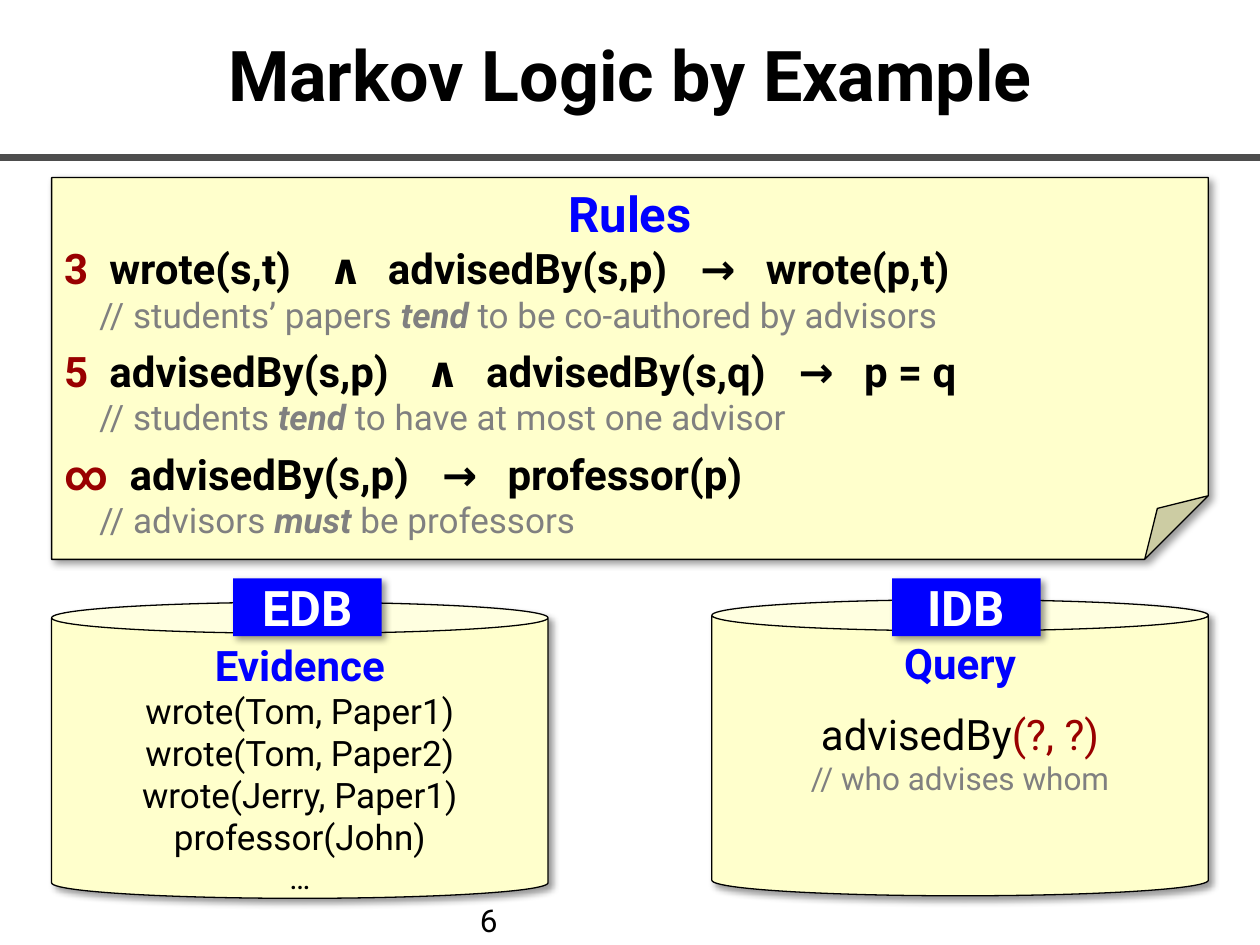
from dataclasses import dataclass

from lxml import etree
from pptx import Presentation
from pptx.dml.color import RGBColor
from pptx.enum.shapes import MSO_CONNECTOR, MSO_SHAPE
from pptx.enum.text import MSO_ANCHOR, PP_ALIGN
from pptx.oxml.ns import qn
from pptx.util import Inches, Pt

CENTER, LEFT = PP_ALIGN.CENTER, PP_ALIGN.LEFT
TOP, MIDDLE = MSO_ANCHOR.TOP, MSO_ANCHOR.MIDDLE
NOTE, CAN, LABEL = MSO_SHAPE.FOLDED_CORNER, MSO_SHAPE.CAN, MSO_SHAPE.RECTANGLE
STRAIGHT = MSO_CONNECTOR.STRAIGHT

FONT = "Roboto"
BLACK, WHITE, BLUE = "000000", "FFFFFF", "0000FF"
RED, GRAY, CREAM, RULE_GRAY = "990000", "808080", "FFFFCC", "4D4D4D"


@dataclass(frozen=True)
class Box:
    left: float
    top: float
    width: float
    height: float

    def lengths(self) -> list:
        return [Inches(v) for v in (self.left, self.top, self.width, self.height)]


@dataclass(frozen=True)
class Run:
    text: str
    size: int
    color: str = BLACK
    bold: bool = False
    italic: bool = False


@dataclass(frozen=True)
class Line:
    runs: tuple
    align: int = CENTER
    before: int = 0
    after: int = 0
    indent: float = 0
    stops: tuple = ()


@dataclass(frozen=True)
class Rule:
    weight: str
    formula: tuple
    stops: tuple
    subject: str
    modal: str
    claim: str

    def lines(self) -> list:
        formula = Run("\t" + "\t".join(self.formula), 24, BLACK, True)
        comment = (
            Run(f"// {self.subject} ", 20, GRAY),
            Run(self.modal, 20, GRAY, True, True),
            Run(f" {self.claim}", 20, GRAY),
        )
        return [
            Line((Run(self.weight, 24, RED, True), formula), LEFT, stops=self.stops),
            Line(comment, LEFT, after=6, indent=0.28),
        ]


@dataclass(frozen=True)
class Database:
    label: str
    label_left: float
    box: Box
    lines: tuple


def rgb(value: str) -> RGBColor:
    return RGBColor.from_string(value)


def write(frame, lines, anchor=TOP, wrap: bool = True) -> None:
    frame.word_wrap = wrap
    frame.vertical_anchor = anchor
    for index, line in enumerate(lines):
        paragraph = frame.add_paragraph() if index else frame.paragraphs[0]
        paragraph.alignment = line.align
        paragraph.space_before = Pt(line.before)
        paragraph.space_after = Pt(line.after)
        properties = paragraph._p.get_or_add_pPr()
        properties.set("marL", str(Inches(line.indent)))
        if line.stops:
            tabs = etree.SubElement(properties, qn("a:tabLst"))
            for stop in line.stops:
                etree.SubElement(tabs, qn("a:tab"), pos=str(Inches(stop)), algn="l")
        for part in line.runs:
            run = paragraph.add_run()
            run.text = part.text
            run.font.name = FONT
            run.font.size = Pt(part.size)
            run.font.bold = part.bold
            run.font.italic = part.italic
            run.font.color.rgb = rgb(part.color)


def add_text(slide, box: Box, line: Line) -> None:
    write(slide.shapes.add_textbox(*box.lengths()).text_frame, [line], MIDDLE)


def add_panel(slide, kind, box: Box, fill: str, outlined: bool = True):
    panel = slide.shapes.add_shape(kind, *box.lengths())
    panel.fill.solid()
    panel.fill.fore_color.rgb = rgb(fill)
    if outlined:
        panel.line.color.rgb = rgb(BLACK)
        panel.line.width = Pt(0.75)
    else:
        panel.line.fill.background()
    panel.shadow.inherit = False
    effects = panel._element.spPr.find(qn("a:effectLst"))
    shadow = etree.SubElement(
        effects, qn("a:outerShdw"), blurRad=str(Pt(4)), dist=str(Pt(3)),
        dir="2700000", algn="tl", rotWithShape="0",
    )
    tint = etree.SubElement(shadow, qn("a:srgbClr"), val=BLACK)
    etree.SubElement(tint, qn("a:alpha"), val="40000")
    return panel


def add_divider(slide, y: float) -> None:
    divider = slide.shapes.add_connector(
        STRAIGHT, Inches(0), Inches(y), Inches(10), Inches(y)
    )
    divider.line.color.rgb = rgb(RULE_GRAY)
    divider.line.width = Pt(4.5)
    etree.SubElement(divider._element.spPr, qn("a:effectLst"))


def add_database(slide, database: Database) -> None:
    can = add_panel(slide, CAN, database.box, CREAM)
    can.adjustments[0] = 0.105
    write(can.text_frame, database.lines)
    label_box = Box(database.label_left, 4.59, 1.18, 0.46)
    label = add_panel(slide, LABEL, label_box, BLUE, outlined=False)
    name = Line((Run(database.label, 28, WHITE, True),))
    write(label.text_frame, [name], MIDDLE, wrap=False)


RULES = (
    Rule("3", ("wrote(s,t)", "∧", "advisedBy(s,p)", "→", "wrote(p,t)"),
         (0.36, 2.1, 2.57, 5.05, 5.57),
         "students’ papers", "tend", "to be co-authored by advisors"),
    Rule("5", ("advisedBy(s,p)", "∧", "advisedBy(s,q)", "→", "p = q"),
         (0.36, 2.87, 3.35, 5.83, 6.35),
         "students", "tend", "to have at most one advisor"),
    Rule("∞", ("advisedBy(s,p)", "→", "professor(p)"),
         (0.52, 3.0, 3.52),
         "advisors", "must", "be professors"),
)
FACTS = (
    "wrote(Tom, Paper1)",
    "wrote(Tom, Paper2)",
    "wrote(Jerry, Paper1) professor(John)",
)
EVIDENCE = (
    Line((Run("Evidence", 24, BLUE, True),)),
    *(Line((Run(fact, 20),)) for fact in FACTS),
    Line((Run("…", 18),)),
)
QUERY = (
    Line((Run("Query", 24, BLUE, True),)),
    Line((Run("advisedBy", 24), Run("(?, ?)", 24, RED)), before=12),
    Line((Run("// who advises whom", 18, GRAY),)),
)
DATABASES = (
    Database("EDB", 1.85, Box(0.41, 4.78, 3.94, 2.35), EVIDENCE),
    Database("IDB", 7.08, Box(5.65, 4.76, 3.94, 2.35), QUERY),
)


def main() -> None:
    deck = Presentation()
    deck.slide_width, deck.slide_height = Inches(10), Inches(7.5)
    slide = deck.slides.add_slide(deck.slide_layouts[6])
    add_divider(slide, 1.25)
    title = Line((Run("Markov Logic by Example", 40, BLACK, True),))
    add_text(slide, Box(0, 0, 10, 1.17), title)
    add_text(slide, Box(3.71, 7.1, 2.33, 0.4), Line((Run("6", 18),), LEFT))
    rules_note = add_panel(slide, NOTE, Box(0.41, 1.41, 9.18, 3.03), CREAM)
    heading = Line((Run("Rules", 28, BLUE, True),))
    rule_lines = [line for rule in RULES for line in rule.lines()]
    write(rules_note.text_frame, [heading, *rule_lines])
    for database in DATABASES:
        add_database(slide, database)
    deck.save("out.pptx")


if __name__ == "__main__":
    main()
